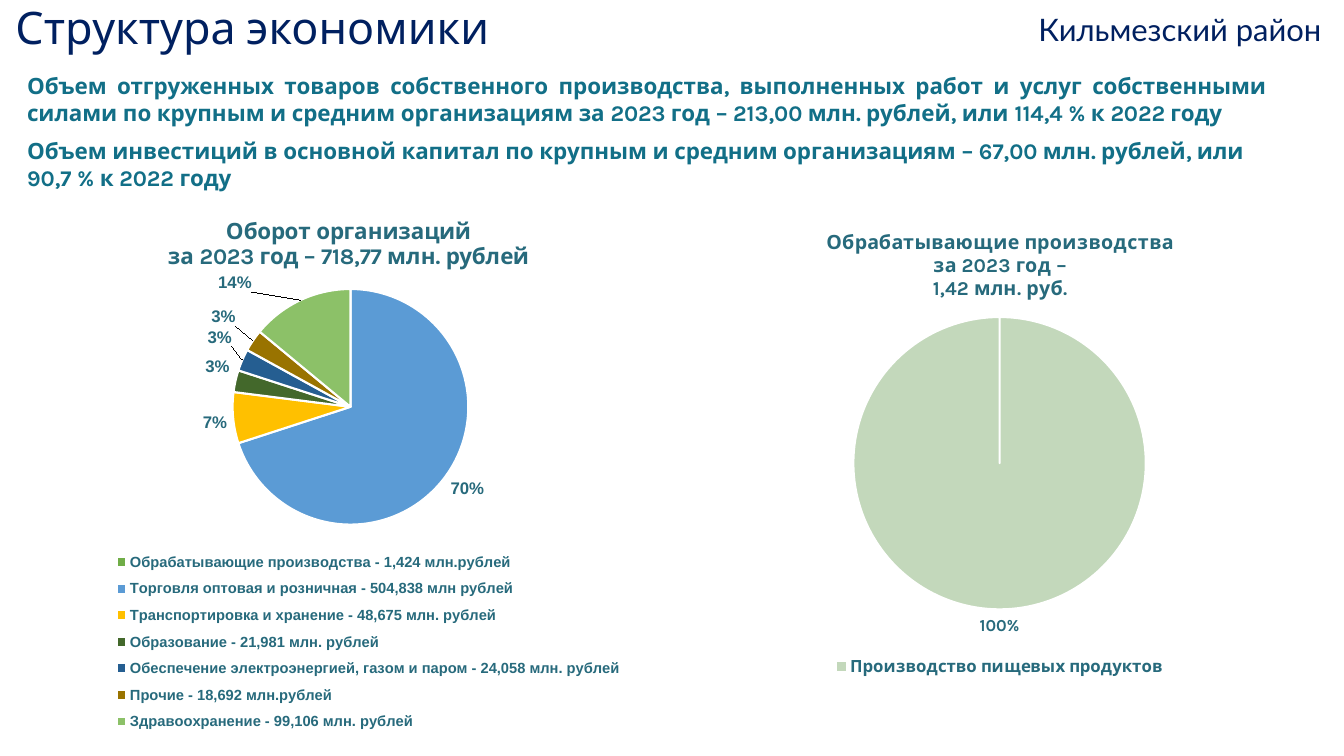
from copy import deepcopy

from lxml import etree
from pptx import Presentation, util as u
from pptx.chart.data import CategoryChartData
from pptx.dml.color import RGBColor
from pptx.enum import chart as ch, text
from pptx.oxml.ns import qn

NAVY = RGBColor(0x00, 0x20, 0x60)
TEAL = RGBColor(0x12, 0x6F, 0x87)
CHART_TEXT = RGBColor(0x27, 0x6A, 0x7C)
WHITE = RGBColor(0xFF, 0xFF, 0xFF)
SECTORS = [RGBColor.from_string(c) for c in (
    "70AD47", "5B9BD5", "FFC000", "43682B", "255E91", "997300", "8CC168")]
FOOD = RGBColor(0xC3, 0xD8, 0xBB)

CELL = u.Inches(1) / 12  # 160 columns by 90 rows


def add_xml(parent, tag, val=None):
    el = etree.SubElement(parent, qn(f"c:{tag}"))
    if val is not None:
        el.set("val", str(val))
    return el


def set_layout(parent, index, **values):
    """Give a chart part a manual layout; x, y, w and h are percent of the chart."""
    for old in parent.findall(qn("c:layout")):
        parent.remove(old)
    layout = etree.Element(qn("c:layout"))
    manual = add_xml(layout, "manualLayout")
    if "target" in values:
        add_xml(manual, "layoutTarget", values.pop("target"))
    if values.pop("edge", True):
        add_xml(manual, "xMode", "edge")
        add_xml(manual, "yMode", "edge")
    for key, value in values.items():
        add_xml(manual, key, value / 100)
    parent.insert(index, layout)


def shift_labels(labels, shifts):
    """Move the percent labels of single sectors by (x, y) percent of the chart."""
    for order, (idx, (x, y)) in enumerate(shifts.items()):
        label = etree.Element(qn("c:dLbl"))
        add_xml(label, "idx", idx)
        set_layout(label, 1, edge=False, x=x, y=y)
        label.append(deepcopy(labels.find(qn("c:txPr"))))
        add_xml(label, "dLblPos", "outEnd")
        for part in ("LegendKey", "Val", "CatName", "SerName", "Percent", "BubbleSize"):
            add_xml(label, f"show{part}", int(part == "Percent"))
        labels.insert(order, label)


def set_font(font, name, size, color, bold=False):
    font.name, font.size, font.bold = name, u.Pt(size), bold
    font.color.rgb = color


class Page:
    def __init__(self, prs):
        self.s = prs.slides.add_slide(prs.slide_layouts[5])

    def place(self, *cells):
        return [u.Emu(round(c * CELL)) for c in cells]

    def fill_text(self, tf, words, align=text.PP_ALIGN.LEFT, spacing=None, **font):
        tf.word_wrap = True
        p = tf.paragraphs[0]
        p.alignment, p.line_spacing = align, spacing
        r = p.add_run()
        r.text = words
        set_font(r.font, **font)

    def title(self, box, words, **style):
        sp = self.s.shapes.title
        sp.left, sp.top, sp.width, sp.height = self.place(*box)
        sp.text_frame.auto_size = text.MSO_AUTO_SIZE.NONE
        sp.text_frame.vertical_anchor = text.MSO_ANCHOR.MIDDLE
        self.fill_text(sp.text_frame, words, **style)

    def text(self, box, words, **style):
        sp = self.s.shapes.add_textbox(*self.place(*box))
        self.fill_text(sp.text_frame, words, **style)

    def pie(self, box, title, sectors, colors, font, title_size, legend_size,
            title_at, plot_at, legend_at, shifts=None):
        data = CategoryChartData()
        data.categories = [name for name, _ in sectors]
        data.add_series("Series 1", [value for _, value in sectors])
        chart = self.s.shapes.add_chart(
            ch.XL_CHART_TYPE.PIE, *self.place(*box), data).chart
        set_font(chart.font, font, 10, CHART_TEXT, True)

        tf = chart.chart_title.text_frame
        tf.text = title
        for p in tf.paragraphs:
            p.alignment = text.PP_ALIGN.CENTER
            for r in p.runs:
                set_font(r.font, "Karla", title_size, CHART_TEXT, True)
        chart.chart_title.include_in_layout = False

        chart.has_legend = True
        chart.legend.position = ch.XL_LEGEND_POSITION.BOTTOM
        chart.legend.include_in_layout = False
        set_font(chart.legend.font, font, legend_size, CHART_TEXT, True)

        plot = chart.plots[0]
        plot.vary_by_categories = True
        series = plot.series[0]
        for i, color in enumerate(colors):
            fmt = series.points[i].format
            fmt.fill.solid()
            fmt.fill.fore_color.rgb = color
            fmt.line.color.rgb = WHITE
            fmt.line.width = u.Pt(1.5)
        labels = series.data_labels
        labels.show_value = False
        labels.show_percentage = True
        labels.position = ch.XL_LABEL_POSITION.OUTSIDE_END
        set_font(labels.font, font, 12, CHART_TEXT, True)

        def part(query):
            return chart.element.xpath(query)[0]

        shift_labels(part(".//c:ser/c:dLbls"), shifts or {})
        set_layout(part("./c:chart/c:title"), 1, **title_at)
        set_layout(part(".//c:plotArea"), 0, target="inner", **plot_at)
        set_layout(part(".//c:legend"), 1, **legend_at)


def main():
    prs = Presentation()
    prs.slide_width, prs.slide_height = u.Inches(13.33), u.Inches(7.5)
    page = Page(prs)
    page.title((-7.2, 0.72, 74.52, 5.64), "Структура экономики", spacing=0.9,
               align=text.PP_ALIGN.CENTER, name="Karla", size=32, color=NAVY)
    body = dict(name="Karla", size=16, color=TEAL, bold=True)
    page.text((2.04, 8.04, 150, 7.68),
              "Объем отгруженных товаров собственного производства, выполненных работ "
              "и услуг собственными силами по крупным и средним организациям за 2023 год – "
              "213,00 млн. рублей, или 114,4 % к 2022 году",
              align=text.PP_ALIGN.JUSTIFY, **body)
    page.text((2.04, 15.72, 147.72, 7.68),
              "Объем инвестиций в основной капитал по крупным и средним организациям – "
              "67,00 млн. рублей, или 90,7 % к 2022 году", **body)
    page.pie((-5.64, 24.72, 99.48, 66.72),
             "Оборот организаций\nза 2023 год – 718,77 млн. рублей",
             [("Обрабатывающие производства - 1,424 млн.рублей", 0),
              ("Торговля оптовая и розничная - 504,838 млн рублей", 70),
              ("Транспортировка и хранение - 48,675 млн. рублей", 7),
              ("Образование - 21,981 млн. рублей", 3),
              ("Обеспечение электроэнергией, газом и паром - 24,058 млн. рублей", 3),
              ("Прочие - 18,692 млн.рублей", 3),
              ("Здравоохранение - 99,106 млн. рублей", 14)],
             SECTORS, "Arial", 16, 10.5,
             title_at=dict(x=25.4, y=1.2),
             plot_at=dict(x=33.5, y=14.5, w=28.2, h=42.1),
             legend_at=dict(x=18.8, y=60, w=62, h=35),
             shifts={2: (0, -0.8), 3: (0, -0.8), 4: (-0.6, -2),
                     5: (-1.5, -2), 6: (-5.5, -0.5)})
    page.pie((78.96, 24.72, 80.04, 56.88),
             "Обрабатывающие производства\nза 2023 год –\n1,42 млн. руб.",
             [("Производство пищевых продуктов", 100)],
             [FOOD], "Karla", 14, 12,
             title_at=dict(x=23.8, y=4),
             plot_at=dict(x=28.2, y=22.9, w=43.6, h=61.2),
             legend_at=dict(x=24.5, y=93, w=51, h=6))
    page.text((122.4, 0.72, 38.76, 5.64), "Кильмезский район",
              name="Lato", size=22.1, color=NAVY)
    prs.save("out.pptx")


if __name__ == "__main__":
    main()
